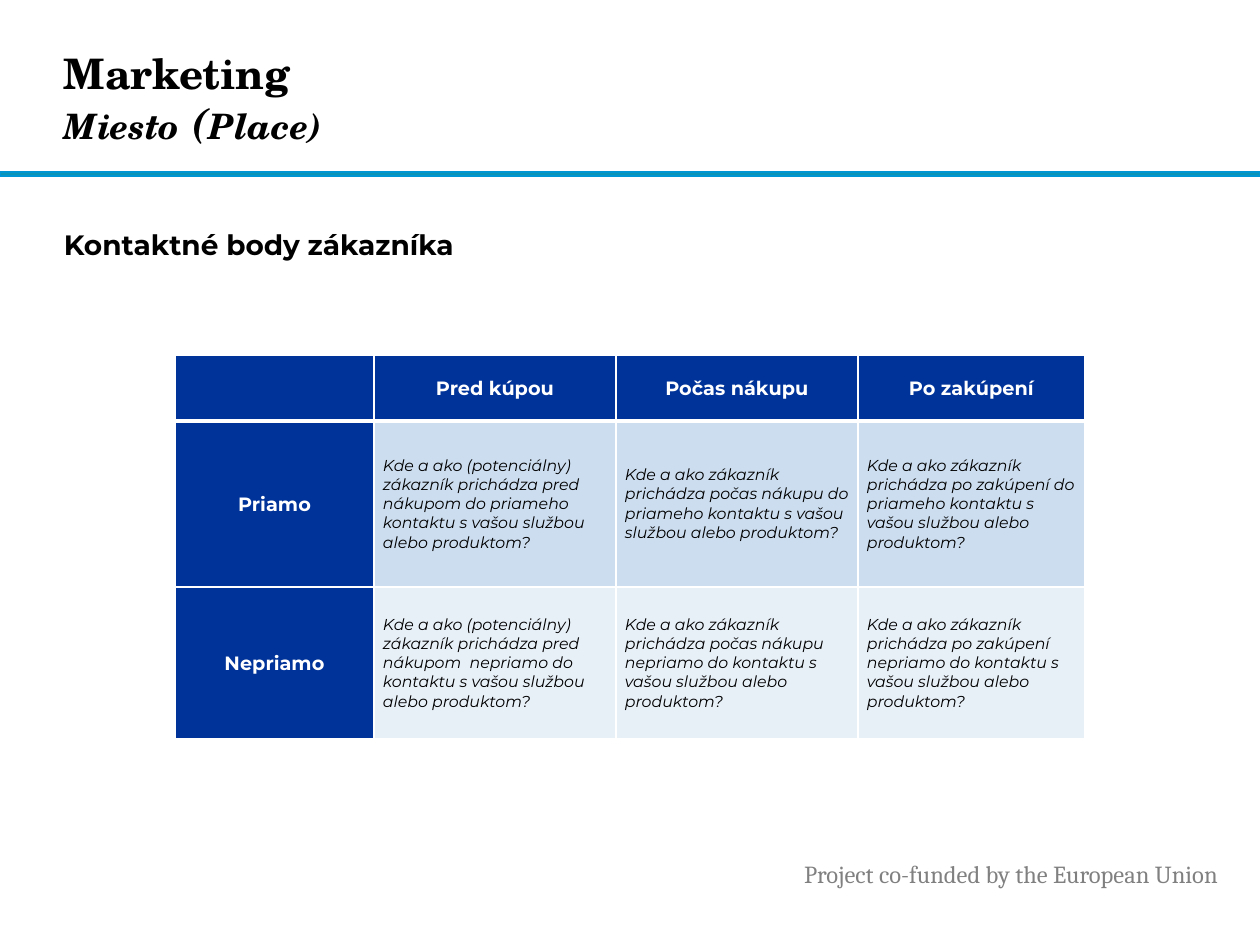
from lxml import etree
from pptx import Presentation
from pptx.dml.color import RGBColor
from pptx.enum.shapes import MSO_SHAPE
from pptx.enum.text import MSO_ANCHOR, PP_ALIGN
from pptx.oxml.ns import qn
from pptx.util import Emu, Pt

RECT = MSO_SHAPE.RECTANGLE
MIDDLE, TOP = MSO_ANCHOR.MIDDLE, MSO_ANCHOR.TOP
CENTER, LEFT = PP_ALIGN.CENTER, PP_ALIGN.LEFT

SERIF, SANS, SMALL = "TeX Gyre Schola", "Montserrat", "Cambria"
COLORS = {
    "black": "000000", "white": "FFFFFF", "grey": "808080",
    "rule": "0C94B7", "edge": "0096D3",
    "head": "003399", "dark": "CCDDEF", "light": "E7EFF7",
}

HEADS = ["", "Pred kúpou", "Počas nákupu", "Po zakúpení"]
ROWS = [
    ["Priamo",
     "Kde a ako (potenciálny) zákazník prichádza pred nákupom do priameho "
     "kontaktu s vašou službou alebo produktom?",
     "Kde a ako zákazník prichádza počas nákupu do priameho kontaktu s vašou "
     "službou alebo produktom?",
     "Kde a ako zákazník prichádza po zakúpení do priameho kontaktu s vašou "
     "službou alebo produktom?"],
    ["Nepriamo",
     "Kde a ako (potenciálny) zákazník prichádza pred nákupom  nepriamo do "
     "kontaktu s vašou službou alebo produktom?",
     "Kde a ako zákazník prichádza počas nákupu nepriamo do kontaktu s vašou "
     "službou alebo produktom?",
     "Kde a ako zákazník prichádza po zakúpení nepriamo do kontaktu s vašou "
     "službou alebo produktom?"],
]
WIDTHS = [199, 242, 242, 227]
HEIGHTS = [66, 166, 152]


def px(n):
    return Emu(round(n * 914400 / 126))


def rgb(name):
    return RGBColor.from_string(COLORS[name])


def style(font, face, size, color, bold=False, italic=False):
    font.name, font.size = face, Pt(size)
    font.bold, font.italic = bold, italic
    font.color.rgb = rgb(color)


def add_box(slide, box, pad, anchor=TOP):
    """Add a wrapping text box; pad is its side and its top inset."""
    frame = slide.shapes.add_textbox(*map(px, box)).text_frame
    frame.word_wrap = True
    frame.vertical_anchor = anchor
    frame.margin_left = frame.margin_right = px(pad[0])
    frame.margin_top = frame.margin_bottom = px(pad[1])
    return frame


def add_title(slide, box):
    para = add_box(slide, box, (0, 0), MIDDLE).paragraphs[0]
    style(para.font, SERIF, 24, "black", bold=True)
    parts = [("Marketing", 24, False), ("Miesto", 20, True),
             (" (", 24, True), ("Place)", 20, True)]
    for i, (text, size, italic) in enumerate(parts):
        if i == 1:
            para.add_line_break()
        run = para.add_run()
        run.text = text
        style(run.font, SERIF, size, "black", True, italic)


def add_rule(slide, box):
    bar = slide.shapes.add_shape(RECT, *map(px, box))
    bar.shadow.inherit = False
    bar.fill.solid()
    bar.fill.fore_color.rgb = rgb("rule")
    bar.line.color.rgb = rgb("edge")
    bar.line.width = Pt(1)


def add_body(slide, box):
    para = add_box(slide, box, (0, 6)).paragraphs[0]
    para.text = "Kontaktné body zákazníka"
    para.space_after = Pt(6)
    style(para.font, SANS, 16, "black", bold=True)


def add_footer(slide, box):
    para = add_box(slide, box, (13, 6)).paragraphs[0]
    para.text = "Project co-funded by the European Union"
    style(para.font, SMALL, 14, "grey")


def set_edges(cell, top, bottom):
    """Draw white borders; the side ones are 1 pt wide."""
    props = cell._tc.get_or_add_tcPr()
    for i, (side, size) in enumerate(
            [("L", 1), ("R", 1), ("T", top), ("B", bottom)]):
        line = etree.Element(qn(f"a:ln{side}"), w=str(Pt(size)))
        fill = etree.SubElement(line, qn("a:solidFill"))
        etree.SubElement(fill, qn("a:srgbClr"), val=COLORS["white"])
        props.insert(i, line)


def fill_cell(cell, text, fill, label):
    cell.fill.solid()
    cell.fill.fore_color.rgb = rgb(fill)
    cell.vertical_anchor = MIDDLE
    cell.margin_left = cell.margin_right = px(9)
    cell.margin_top = cell.margin_bottom = 0
    para = cell.text_frame.paragraphs[0]
    para.text = text
    if label:
        para.alignment, para.line_spacing = CENTER, 1.07
        para.space_after = Pt(4)
        style(para.font, SANS, 11, "white", bold=True)
    else:
        para.alignment, para.space_after = LEFT, Pt(3)
        style(para.font, SANS, 9, "black", italic=True)


def add_grid(slide, left, top):
    box = (left, top, sum(WIDTHS), sum(HEIGHTS))
    data = [HEADS] + ROWS
    grid = slide.shapes.add_table(
        len(data), len(HEADS), *map(px, box)).table
    for col, width in zip(grid.columns, WIDTHS):
        col.width = px(width)
    for row, height in zip(grid.rows, HEIGHTS):
        row.height = px(height)
    for r, texts in enumerate(data):
        for c, text in enumerate(texts):
            label = r == 0 or c == 0
            fill = "head" if label else ("dark" if r % 2 else "light")
            cell = grid.cell(r, c)
            fill_cell(cell, text, fill, label)
            set_edges(cell, 3 if r == 1 else 1, 3 if r == 0 else 1)


def main():
    deck = Presentation()
    deck.slide_width, deck.slide_height = px(1260), px(945)
    slide = deck.slides.add_slide(deck.slide_layouts[6])
    add_rule(slide, (0, 172, 1260, 4))
    add_footer(slide, (791, 853, 461, 43))
    add_title(slide, (64, 23, 916, 150))
    add_body(slide, (64, 222, 1070, 638))
    add_grid(slide, 175, 355)
    deck.save("out.pptx")


if __name__ == "__main__":
    main()
